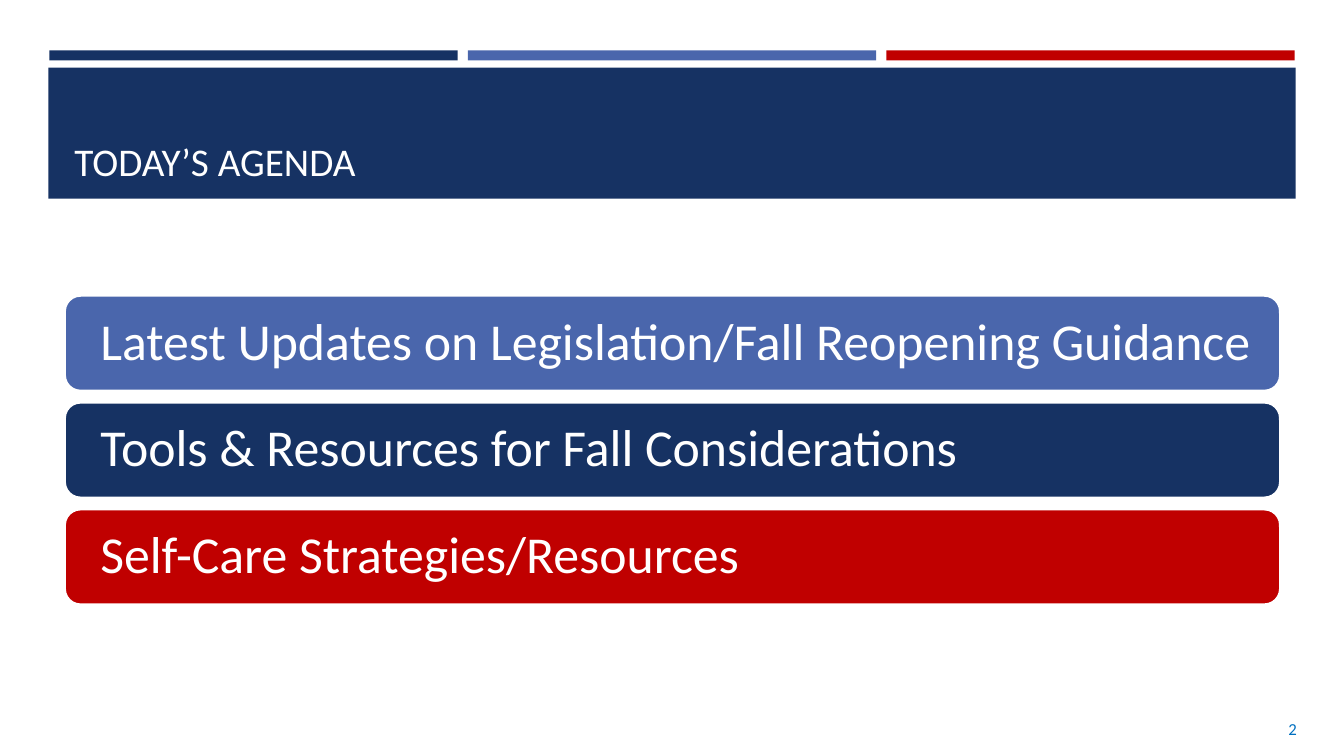
from pptx import Presentation, util as u
from pptx.dml.color import RGBColor
from pptx.enum import shapes, text

TITLE = "TODAY’S AGENDA"
PAGE = "2"
TOPICS = [
    ("Latest Updates on Legislation/Fall Reopening Guidance", "blue"),
    ("Tools & Resources for Fall Considerations", "navy"),
    ("Self-Care Strategies/Resources", "red"),
]
STRIPES = ["navy", "blue", "red"]

THEME = {
    "font": "Calibri",
    "color": {"navy": "163263", "blue": "4A66AC", "red": "C00000",
              "white": "FFFFFF", "page": "0070C0"},
    "size": {"title": 28, "topic": 37, "page": 12},
}
PX = u.Inches(1) // 100
KIND = shapes.MSO_SHAPE
ALIGN = text.PP_ALIGN
ANCHOR = text.MSO_ANCHOR


def color(name):
    return RGBColor.from_string(THEME["color"][name])


def assign(item, **vals):
    for key, val in vals.items():
        setattr(item, key, val)


def block(slide, kind, box, fill, edge=0):
    shape = slide.shapes.add_shape(kind, *(n * PX for n in box))
    shape.shadow.inherit = False
    shape.fill.solid()
    shape.fill.fore_color.rgb = color(fill)
    if edge:
        shape.line.color.rgb = color("white")
        shape.line.width = u.Pt(edge)
    else:
        shape.line.fill.background()
    return shape


def write(shape, words, size, tint, anchor, pads=(10, 5, 10, 5), **form):
    frame = shape.text_frame
    left, top, right, bottom = (n * PX for n in pads)
    assign(frame, word_wrap=True, vertical_anchor=anchor, margin_left=left,
           margin_top=top, margin_right=right, margin_bottom=bottom)
    para = frame.paragraphs[0]
    assign(para, **form)
    run = para.add_run()
    run.text = words
    assign(run.font, name=THEME["font"], size=u.Pt(THEME["size"][size]))
    run.font.color.rgb = color(tint)


def label(slide, box, *args, **form):
    write(slide.shapes.add_textbox(*(n * PX for n in box)), *args, **form)


def main():
    deck = Presentation()
    assign(deck, slide_width=u.Inches(13.33), slide_height=u.Inches(7.5))
    slide = deck.slides.add_slide(deck.slide_layouts[6])

    for i, fill in enumerate(STRIPES):
        block(slide, KIND.RECTANGLE, (49 + i * 415, 50, 405, 10), fill)
    block(slide, KIND.RECTANGLE, (48, 67, 1237, 130), "navy")
    label(slide, (64, 77, 1206, 111), TITLE, "title", "white",
          ANCHOR.BOTTOM, alignment=ALIGN.LEFT)

    for i, (words, fill) in enumerate(TOPICS):
        bar = block(slide, KIND.ROUNDED_RECTANGLE,
                    (64, 293 + i * 106, 1206, 95), fill, edge=2)
        write(bar, words, "topic", "white", ANCHOR.MIDDLE,
              (31, 15, 15, 15), alignment=ALIGN.LEFT, line_spacing=0.9)

    label(slide, (1181, 703, 115, 40), PAGE, "page", "page",
          ANCHOR.MIDDLE, alignment=ALIGN.RIGHT)
    deck.save("out.pptx")


if __name__ == "__main__":
    main()
